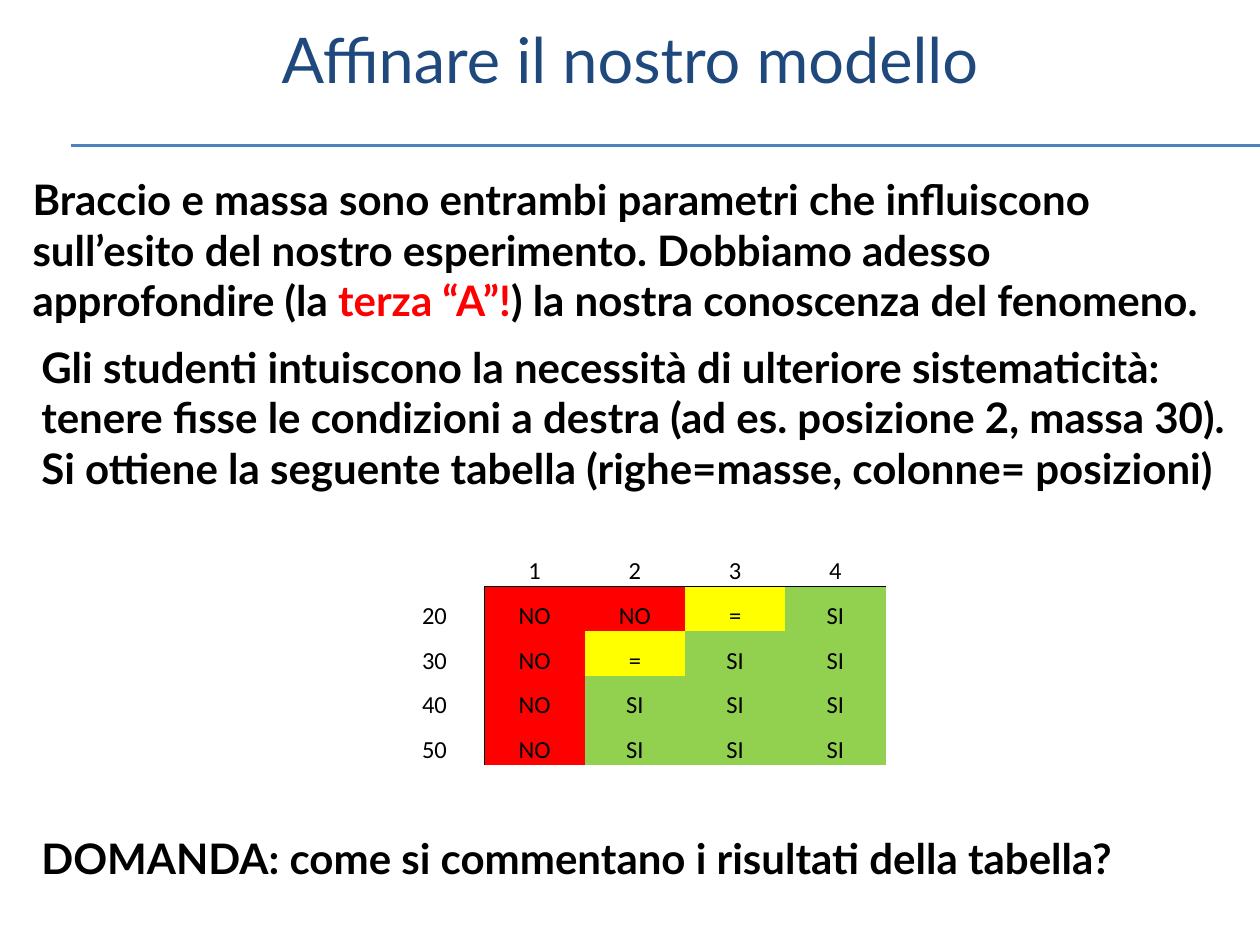
from lxml import etree
from pptx import Presentation
from pptx import util as u
from pptx.dml.color import RGBColor
from pptx.enum import shapes, text
from pptx.oxml.ns import qn


def colour(value):
    return RGBColor.from_string(value)


class SlideBuilder:
    heading_font = "Lato"
    table_font = "Calibri"
    black = "000000"
    title_blue = "1F497D"
    rule_blue = "4F81BD"
    red = "FF0000"
    fills = {"NO": "FF0000", "=": "FFFF00", "SI": "92D050"}

    def __init__(self, slide):
        self.slide = slide

    def format_run(self, run, font, size, value, bold=False):
        run.font.name = font
        run.font.size = u.Pt(size)
        run.font.bold = bold
        run.font.color.rgb = colour(value)

    def add_rule(self, left, right, top):
        rule = self.slide.shapes.add_connector(
            shapes.MSO_CONNECTOR.STRAIGHT,
            u.Inches(left), u.Inches(top), u.Inches(right), u.Inches(top))
        rule.line.color.rgb = colour(self.rule_blue)
        rule.line.width = u.Pt(0.75)
        etree.SubElement(rule._element.spPr, qn("a:effectLst"))

    def add_box(self, left, top, width, height):
        shape = self.slide.shapes.add_textbox(
            u.Inches(left), u.Inches(top), u.Inches(width), u.Inches(height))
        shape.text_frame.word_wrap = True
        return shape.text_frame

    def add_title(self, title):
        frame = self.add_box(0, 0, 10, 0.92)
        frame.text = title
        frame.vertical_anchor = text.MSO_ANCHOR.MIDDLE
        paragraph = frame.paragraphs[0]
        paragraph.alignment = text.PP_ALIGN.CENTER
        self.format_run(paragraph.runs[0], self.heading_font, 36, self.title_blue)

    def add_body(self, left, top, width, height, paragraphs):
        frame = self.add_box(left, top, width, height)
        frame.auto_size = text.MSO_AUTO_SIZE.SHAPE_TO_FIT_TEXT
        for index, pieces in enumerate(paragraphs):
            paragraph = frame.add_paragraph() if index else frame.paragraphs[0]
            for words, value in pieces:
                run = paragraph.add_run()
                run.text = words
                self.format_run(run, self.heading_font, 24, value, bold=True)

    def set_borders(self, cell, visible):
        properties = cell._tc.get_or_add_tcPr()
        for index, side in enumerate("LRTB"):
            line = etree.Element(qn(f"a:ln{side}"), w=str(u.Pt(0.5)))
            if side in visible:
                fill = etree.SubElement(line, qn("a:solidFill"))
                etree.SubElement(fill, qn("a:srgbClr"), val=self.black)
            else:
                etree.SubElement(line, qn("a:noFill"))
            properties.insert(index, line)

    def format_cell(self, cell, words):
        cell.text = words
        cell.vertical_anchor = text.MSO_ANCHOR.BOTTOM
        cell.margin_left = cell.margin_right = cell.margin_top = u.Inches(0.01)
        cell.margin_bottom = 0
        if words in self.fills:
            cell.fill.solid()
            cell.fill.fore_color.rgb = colour(self.fills[words])
        else:
            cell.fill.background()
        paragraph = cell.text_frame.paragraphs[0]
        paragraph.alignment = text.PP_ALIGN.CENTER
        for run in paragraph.runs:
            self.format_run(run, self.table_font, 14, self.black)

    def add_results(self, left, top, width, height, rows):
        table = self.slide.shapes.add_table(
            len(rows), len(rows[0]),
            u.Inches(left), u.Inches(top), u.Inches(width), u.Inches(height)).table
        table.first_row = table.horz_banding = False
        for row, values in enumerate(rows):
            for column, words in enumerate(values):
                cell = table.cell(row, column)
                self.format_cell(cell, words)
                visible = ""
                if column:
                    visible += {0: "B", 1: "T"}.get(row, "")
                if row:
                    visible += {0: "R", 1: "L"}.get(column, "")
                self.set_borders(cell, visible)


def main():
    presentation = Presentation()
    presentation.slide_width = u.Inches(10)
    presentation.slide_height = u.Inches(7.5)
    builder = SlideBuilder(presentation.slides.add_slide(presentation.slide_layouts[6]))
    black, red = builder.black, builder.red

    for top in (1.15, 1.16):
        builder.add_rule(0.56, 10, top)
    builder.add_title("Affinare il nostro modello")
    builder.add_body(0.16, 1.33, 9.69, 1.31, [[
        ("Braccio e massa sono entrambi parametri che influiscono sull’esito del "
         "nostro esperimento. Dobbiamo adesso approfondire (la ", black),
        ("terza “A”!", red),
        (") la nostra conoscenza del fenomeno.", black)]])
    builder.add_body(0.23, 6.56, 9.61, 0.5, [
        [("DOMANDA: come si commentano i risultati della tabella?", black)]])
    builder.add_body(0.23, 2.66, 9.69, 1.31, [
        [("Gli studenti intuiscono la necessità di ulteriore sistematicità: tenere "
          "fisse le condizioni a destra (ad es. posizione 2, massa 30).", black)],
        [("Si ottiene la seguente tabella (righe=masse, colonne= posizioni)", black)]])
    builder.add_results(3.05, 4.3, 3.98, 1.77, [
        ["", "1", "2", "3", "4"],
        ["20", "NO", "NO", "=", "SI"],
        ["30", "NO", "=", "SI", "SI"],
        ["40", "NO", "SI", "SI", "SI"],
        ["50", "NO", "SI", "SI", "SI"]])
    presentation.save("out.pptx")


if __name__ == "__main__":
    main()
